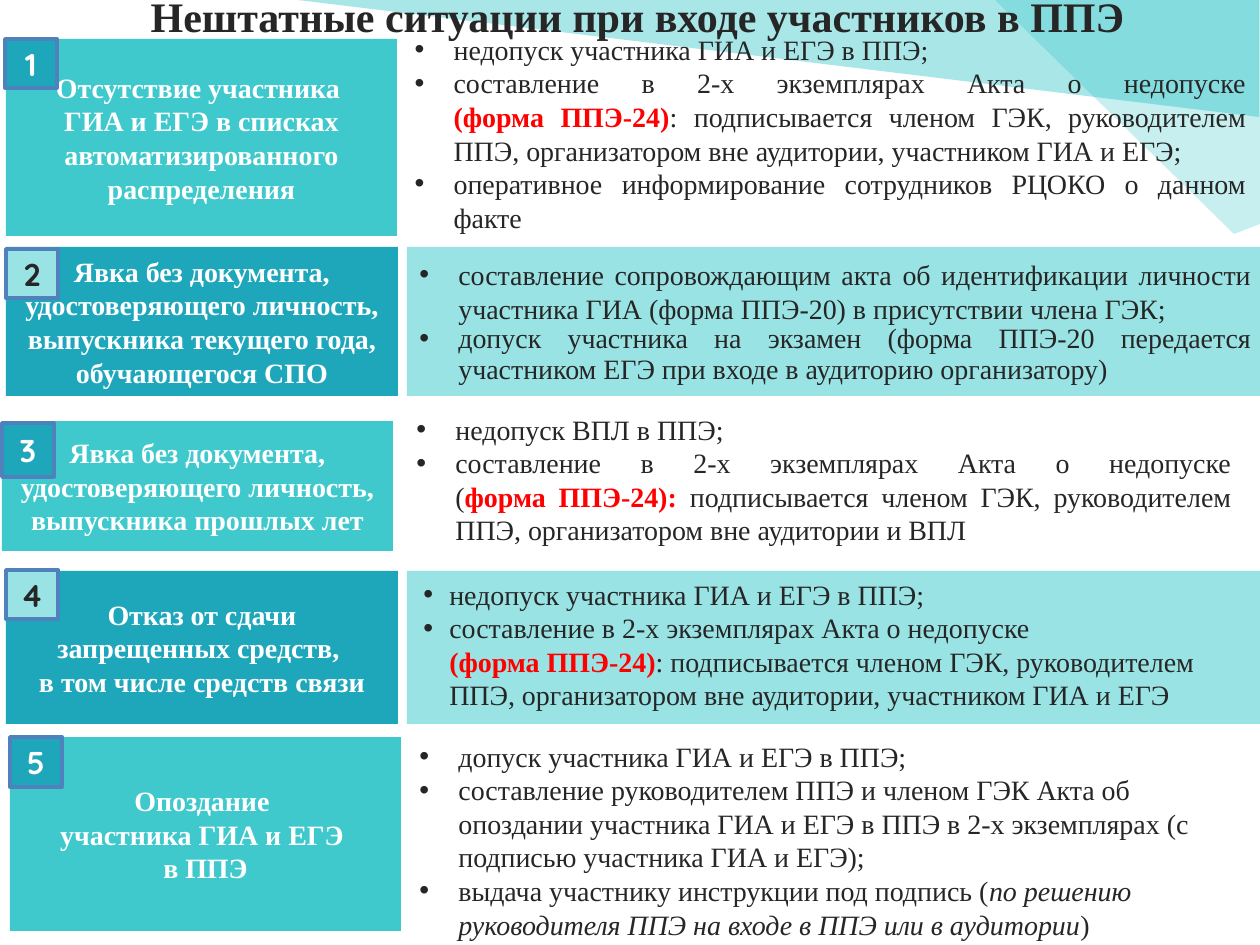
"""Build a slide on irregular situations when participants enter an exam site."""
import copy

import pptx
import pptx.dml.color
import pptx.enum.shapes
import pptx.enum.text
import pptx.oxml.ns
import pptx.util
from lxml import etree

PX = 914400 / 126
FONT = "Times New Roman"
COLORS = {"text": "262626", "white": "FFFFFF", "red": "FF0000", "accent": "20C0C4",
          "light": "9AE3E4", "mid": "40C9CC", "dark": "1EA7BA", "border": "4F81BD"}
RECT = pptx.enum.shapes.MSO_SHAPE.RECTANGLE
ALIGN = pptx.enum.text.PP_ALIGN
MIDDLE = pptx.enum.text.MSO_ANCHOR.MIDDLE
qn = pptx.oxml.ns.qn


def add_run(p, text, size, color, bold=False, italic=False, name=FONT):
    for i, line in enumerate(text.split("\n")):
        if i:
            p.add_line_break()
            p._p[-1].append(copy.deepcopy(r._r.rPr))
        if line:
            r = p.add_run()
            r.text = line
            r.font.size, r.font.name = pptx.util.Pt(size), name
            r.font.bold, r.font.italic = bold, italic
            r.font.color.rgb = pptx.dml.color.RGBColor.from_string(COLORS[color])


def style(sp, fill, line=None):
    sp.shadow.inherit = False
    sp.fill.solid()
    sp.fill.fore_color.rgb = pptx.dml.color.RGBColor.from_string(COLORS[fill])
    if line:
        sp.line.color.rgb = pptx.dml.color.RGBColor.from_string(COLORS[line])
        sp.line.width = pptx.util.Pt(2)
    else:
        sp.line.fill.background()


prs = pptx.Presentation()
prs.slide_width, prs.slide_height = round(1260 * PX), round(945 * PX)
s = prs.slides.add_slide(prs.slide_layouts[1])
title, body = s.placeholders

rays = [
    (39, [(273, -3), (1259, 117), (1259, -4)]),
    (25, [(1265, 222), (1234, 234), (995, 0), (1264, 0), (1264, 224)]),
]
for i, (opacity, points) in enumerate(rays):
    fb = s.shapes.build_freeform(*points[0], scale=PX)
    fb.add_line_segments(points[1:])
    sp = fb.convert_to_shape()
    style(sp, "accent")
    clr = sp._element.spPr.find(".//" + qn("a:srgbClr"))
    etree.SubElement(clr, qn("a:alpha"), val=str(opacity * 1000))
    s.shapes._spTree.insert(2 + i, sp._element)

title.left, title.top, title.width, title.height = [round(v * PX) for v in (20, -43, 1235, 117)]
title.text_frame.vertical_anchor = MIDDLE
p = title.text_frame.paragraphs[0]
p.alignment = ALIGN.CENTER
add_run(p, "Нештатные ситуации при входе участников в ППЭ", 24, "text", True)

labels = [
    ((6, 39, 391, 197), "Отсутствие участника \nГИА и ЕГЭ в списках автоматизированного распределения"),
    ((6, 247, 392, 149), "Явка без документа, удостоверяющего личность, выпускника текущего года, обучающегося СПО"),
    ((2, 421, 391, 130), "Явка без документа, удостоверяющего личность, выпускника прошлых лет"),
    ((6, 571, 392, 153), "Отказ от сдачи\nзапрещенных средств, \nв том числе средств связи"),
    ((10, 737, 391, 194), "Опоздание \nучастника ГИА и ЕГЭ \nв ППЭ"),
]
badges = [(5, 39, 52, 49), (6, 249, 52, 49), (2, 423, 52, 54), (6, 570, 52, 49), (10, 737, 52, 50)]
bands = {1: (407, 247, 857, 149), 3: (407, 571, 856, 153)}
boxes = [(402, 26, 857, 217), (407, 247, 857, 149), (404, 406, 840, 149),
         (398, 571, 869, 149), (407, 733, 853, 217)]
denied = [("недопуск участника ГИА и ЕГЭ в ППЭ;", "")]
act = "составление в 2-х экземплярах Акта о недопуске\n"
signed = ": подписывается членом ГЭК, руководителем ППЭ, организатором вне аудитории, участником ГИА и ЕГЭ"
lists = [
    [denied,
     [(act, ""), ("(форма ППЭ-24)", "red"), (signed + ";", "")],
     [("оперативное информирование сотрудников РЦОКО о данном факте", "")]],
    [[("составление сопровождающим акта об идентификации личности участника ГИА "
       "(форма ППЭ-20) в присутствии члена ГЭК;", "")],
     [("допуск участника на экзамен (форма ППЭ-20 передается участником ЕГЭ "
       "при входе в аудиторию организатору)", "")]],
    [[("недопуск ВПЛ в ППЭ;", "")],
     [(act + "(", ""), ("форма ППЭ-24): ", "red"),
      ("подписывается членом ГЭК, руководителем ППЭ, организатором вне аудитории и ВПЛ", "")]],
    [denied,
     [(act, ""), ("(форма ППЭ-24)", "red"), (signed, "")]],
    [[("допуск участника ГИА и ЕГЭ в ППЭ;", "")],
     [("составление руководителем ППЭ и членом ГЭК Акта об опоздании участника ГИА и ЕГЭ "
       "в ППЭ в 2-х экземплярах (с подписью участника ГИА и ЕГЭ);", "")],
     [("выдача участнику инструкции под подпись (", ""),
      ("по решению руководителя ППЭ на входе в ППЭ или в аудитории", "italic"), (")", "")]],
]

for i, (frame, text) in enumerate(labels):
    sp = s.shapes.add_shape(RECT, *[round(v * PX) for v in frame])
    style(sp, "dark" if i % 2 else "mid")
    sp.text_frame.vertical_anchor = MIDDLE
    p = sp.text_frame.paragraphs[0]
    p.alignment = ALIGN.CENTER
    add_run(p, text, 16, "white", True)

    if i in bands:
        sp = s.shapes.add_shape(RECT, *[round(v * PX) for v in bands[i]])
        style(sp, "light")

    frame = [round(v * PX) for v in boxes[i]]
    if i == 0:
        sp = body
        sp.left, sp.top, sp.width, sp.height = frame
    elif i != 1:
        sp = s.shapes.add_textbox(*frame)
    tf = sp.text_frame
    tf.word_wrap = True
    for j, runs in enumerate(lists[i]):
        p = tf.add_paragraph() if j else tf.paragraphs[0]
        p.alignment = ALIGN.JUSTIFY if i < 3 else ALIGN.LEFT
        p.space_before = pptx.util.Pt(0)
        p.line_spacing = 0.9 if (i, j) == (1, 1) else 1.0
        pPr = p._p.get_or_add_pPr()
        pPr.set("marL", str(round(39 * PX)))
        pPr.set("indent", str(round((-26 if i == 3 else -39) * PX)))
        etree.SubElement(pPr, qn("a:buFont"), typeface="Arial")
        etree.SubElement(pPr, qn("a:buChar"), char="•")
        for text, kind in runs:
            red = kind == "red"
            add_run(p, text, 16, "red" if red else "text", red, kind == "italic")

    sp = s.shapes.add_shape(RECT, *[round(v * PX) for v in badges[i]])
    style(sp, "light" if i % 2 else "dark", "border")
    sp.text_frame.vertical_anchor = MIDDLE
    p = sp.text_frame.paragraphs[0]
    p.alignment = ALIGN.CENTER
    add_run(p, str(i + 1), 18, "text" if i % 2 else "white", True, name="Quicksand")

prs.save("out.pptx")
